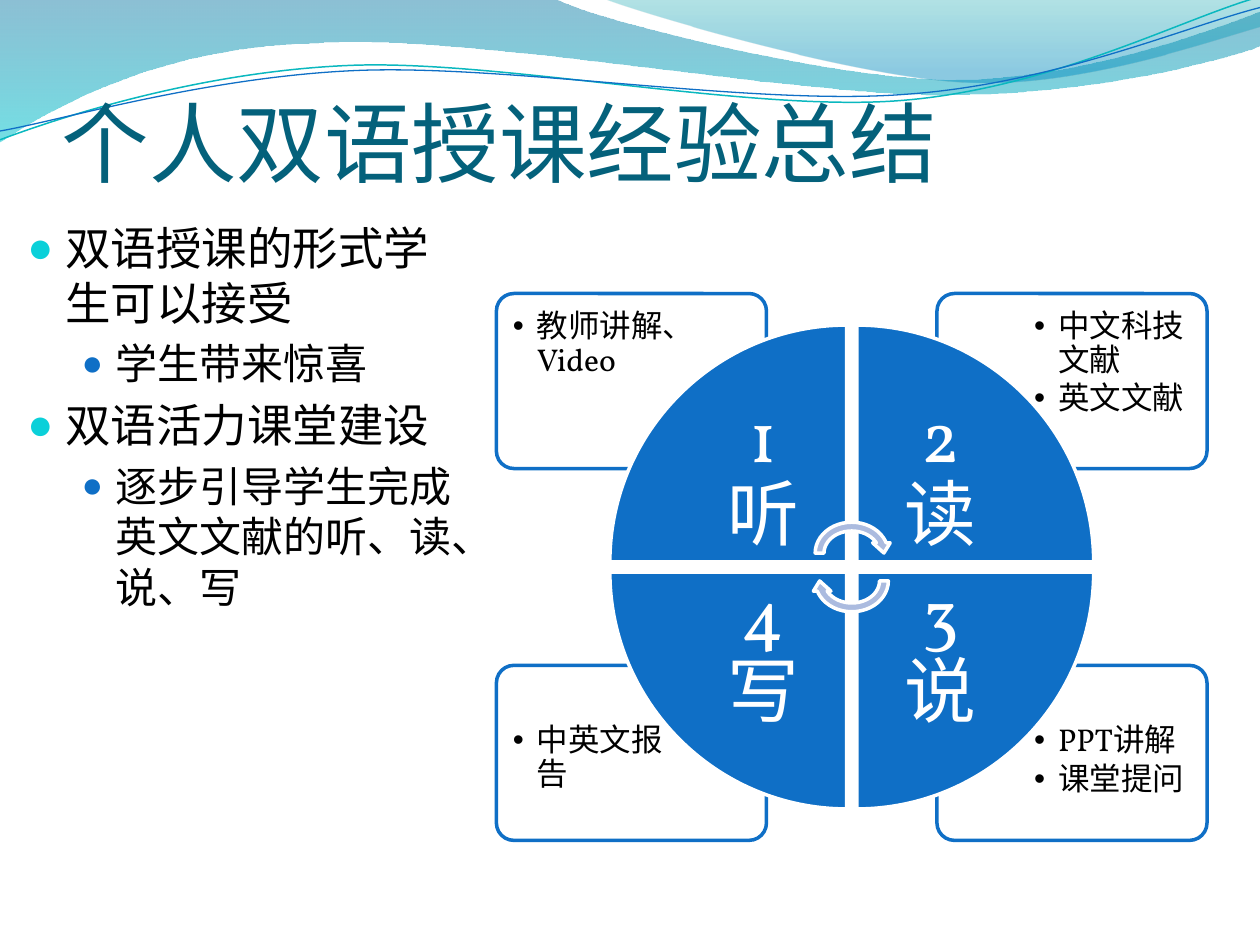
from collections import namedtuple
from itertools import chain, product

from lxml.etree import SubElement
from pptx import Presentation
from pptx.dml.color import RGBColor
from pptx.enum.shapes import MSO_SHAPE
from pptx.enum.text import MSO_ANCHOR, MSO_AUTO_SIZE, PP_ALIGN
from pptx.oxml.ns import qn
from pptx.util import Inches, Pt

Box = namedtuple("Box", "left top width height")
COLORS = {
    "white": "FFFFFF", "black": "000000", "title": "04617B", "blue": "0F6FC6",
    "cyan": "0BD0D9", "teal": "0AB8BF", "arrow": "ABBBDF",
    "wave_top": "0074A1", "wave_low": "00C6CF",
    "crest_top": "00A1A9", "crest_low": "008BBF",
}
TITLE_FONT, TEXT_FONT = "Calibri", "Vollkorn"
PAGE = Box(0, 0, 10, 7.5)
TITLE = Box(0.49, 0.29, 9, 1.25)
OUTLINE = Box(0.12, 1.7, 3.6, 4.8)
CYCLE = Box(3.94, 2.33, 5.64, 4.34)
ARC = 0.55  # handle length of a quarter circle, as a share of its radius

# Start point, then runs of three points (curve) or one point (straight line)
WAVE = [(0, 0), [(4.4, -0.01)], [(4.76, 0.17), (6.64, 0.63), (7.58, 0.63)],
        [(8.53, 0.63), (9.58, 0.26), (10, 0.09)], [(10.01, 0.36)],
        [(9.83, 0.44), (8.7, 0.76), (7.46, 0.75)],
        [(6.22, 0.75), (3.82, 0.28), (2.57, 0.34)],
        [(1.29, 0.36), (0.46, 0.83), (-0.01, 1.13)]]
CREST = [(4.79, -0.01), [(5.09, 0.11), (6.82, 0.62), (7.69, 0.65)],
         [(8.56, 0.69), (9.61, 0.32), (10, 0.21)], [(10, 0)]]
TEAL_LINE = [(0, 1.11), [(0.48, 0.93), (1.58, 0.57), (2.77, 0.52)],
             [(3.95, 0.47), (5.93, 0.89), (7.13, 0.8)],
             [(8.33, 0.71), (9.38, 0.15), (9.98, -0.02)]]
BLUE_LINE = [(0, 1.04), [(0.47, 0.96), (1.64, 0.61), (2.83, 0.56)],
             [(4.03, 0.51), (5.97, 0.84), (7.17, 0.75)],
             [(8.36, 0.67), (9.41, 0.21), (10, 0.06)]]

LEVELS = [dict(size=26, margin=0.3, hang=0.3, bullet="●", bullet_color="cyan", bullet_size=95),
          dict(size=24, margin=0.7, hang=0.27, bullet="●", bullet_color="blue", bullet_size=85)]
POINTS = [(0, "双语授课的形式学生可以接受"), (1, "学生带来惊喜"),
          (0, "双语活力课堂建设"), (1, "逐步引导学生完成英文文献的听、读、说、写")]

# (horizontal side, vertical side): wheel label, card lines
STEPS = {
    (1, 1): ("3说", ["PPT讲解", "课堂提问"]),
    (-1, 1): ("4写", ["中英文报告"]),
    (1, -1): ("2读", ["中文科技文献", "英文文献"]),
    (-1, -1): ("1听", ["教师讲解、Video"]),
}


def rgb(name):
    return RGBColor.from_string(COLORS[name])


def set_opacity(color_element, percent):
    SubElement(color_element, qn("a:alpha"), val=str(percent * 1000))


def paint(shape, fill=None, line=None, width=2):
    shape.shadow.inherit = False
    if fill:
        shape.fill.solid()
        shape.fill.fore_color.rgb = rgb(fill)
    else:
        shape.fill.background()
    if line:
        shape.line.color.rgb = rgb(line)
        shape.line.width = Pt(width)
    else:
        shape.line.fill.background()


def paint_gradient(shape, stops):
    """Fill from top to bottom; each stop is (position, colour, opacity)."""
    paint(shape)
    shape.fill.gradient()
    shape.fill.gradient_angle = 270
    for stop, (position, color, _) in zip(shape.fill.gradient_stops, stops):
        stop.position = position
        stop.color.rgb = rgb(color)
    gradient = shape._element.spPr.find(qn("a:gradFill"))
    for element, stop in zip(gradient.iter(qn("a:srgbClr")), stops):
        set_opacity(element, stop[2])


def set_bullet(para, bullet, margin, hang, color, size):
    properties = para._p.get_or_add_pPr()
    properties.set("marL", str(Inches(margin)))
    properties.set("indent", str(-Inches(hang)))
    holder = SubElement(properties, qn("a:buClr"))
    SubElement(holder, qn("a:srgbClr"), val=COLORS[color])
    SubElement(properties, qn("a:buSzPct"), val=str(size * 1000))
    SubElement(properties, qn("a:buFont"), typeface="Arial")
    SubElement(properties, qn("a:buChar"), char=bullet)


def write(frame, text, size, first=True, font=TEXT_FONT, color="black", align=PP_ALIGN.LEFT,
          before=0, after=0, spacing=1.0, bullet=None, margin=0, hang=0,
          bullet_color="black", bullet_size=100):
    para = frame.paragraphs[0] if first else frame.add_paragraph()
    para.alignment = align
    para.line_spacing = spacing
    para.space_before, para.space_after = Pt(before), Pt(after)
    if bullet:
        set_bullet(para, bullet, margin, hang, bullet_color, bullet_size)
    span = para.add_run()
    span.text = text
    span.font.name, span.font.size = font, Pt(size)
    span.font.color.rgb = rgb(color)


def set_frame(shape, insets, anchor=MSO_ANCHOR.TOP):
    frame = shape.text_frame
    frame.word_wrap = True
    frame.auto_size = MSO_AUTO_SIZE.NONE
    frame.vertical_anchor = anchor
    (frame.margin_left, frame.margin_top,
     frame.margin_right, frame.margin_bottom) = map(Inches, insets)
    return frame


def draw_outline(page, start, *runs, close=True):
    """Draw straight segments through all points, then join runs of three into curves."""
    points = [tuple(map(Inches, point)) for point in chain([start], *runs)]
    builder = page.shapes.build_freeform(*points[0])
    builder.add_line_segments(points[1:], close=close)
    shape = builder.convert_to_shape()
    segments = iter(list(shape._element.iter(qn("a:lnTo"))))
    for run in runs:
        parts = [next(segments) for _ in run]
        if len(run) == 3:
            curve = parts[0].makeelement(qn("a:cubicBezTo"))
            parts[0].addprevious(curve)
            for part in parts:
                curve.append(part[0])
                part.getparent().remove(part)
    return shape


def add_waves(page):
    for outline, stops in (
            (WAVE, [(0, "wave_top", 45), (1, "wave_low", 55)]),
            (CREST, [(0, "crest_top", 30), (0.8, "crest_low", 45)])):
        paint_gradient(draw_outline(page, *outline), stops)
    for outline, color, width in ((TEAL_LINE, "teal", 0.85), (BLUE_LINE, "blue", 0.75)):
        paint(draw_outline(page, *outline, close=False), line=color, width=width)


def add_title(page, box, text):
    title = page.shapes.title
    title.left, title.top, title.width, title.height = map(Inches, box)
    write(set_frame(title, (0, 0.05, 0, 0), MSO_ANCHOR.BOTTOM), text, 50,
          font=TITLE_FONT, color="title")
    page.shapes._spTree.append(title._element)  # in front of the waves


def add_outline_text(page, box):
    frame = set_frame(page.shapes.add_textbox(*map(Inches, box)), (0.1, 0.05, 0.1, 0.05))
    for index, (level, text) in enumerate(POINTS):
        style = LEVELS[level]
        write(frame, text, first=index == 0, before=0.2 * style["size"], **style)


def pads(side_x, side_y, outer, inner_x, inner_y):
    """Insets of a part whose outer edges face away from the wheel's centre."""
    left, right = (outer, inner_x) if side_x < 0 else (inner_x, outer)
    top, bottom = (outer, inner_y) if side_y < 0 else (inner_y, outer)
    return left, top, right, bottom


def add_card(page, box, side_x, side_y, lines):
    width, height = 0.38 * box.width, 0.32 * box.height
    left = box.left + (box.width - width) * (side_x > 0)
    top = box.top + (box.height - height) * (side_y > 0)
    card = page.shapes.add_shape(MSO_SHAPE.ROUNDED_RECTANGLE,
                                 *map(Inches, (left, top, width, height)))
    card.adjustments[0] = 0.1
    paint(card, "white", "blue")
    set_opacity(card._element.spPr.find(qn("a:solidFill"))[0], 90)
    frame = set_frame(card, pads(side_x, side_y, 0.09, 0.73, 0.43))
    for index, line in enumerate(lines):
        write(frame, line, 18, first=index == 0, spacing=0.9, after=2.7,
              bullet="•", margin=0.19, hang=0.19)


def add_quadrant(page, box, side_x, side_y, label):
    gap, radius = 0.04, box.width / 3

    def at(across, down):
        return (box.left + box.width / 2 + side_x * (gap + across * radius),
                box.top + box.height / 2 + side_y * (gap + down * radius))

    quadrant = draw_outline(page, at(0, 0), [at(1, 0)], [at(1, ARC), at(ARC, 1), at(0, 1)])
    paint(quadrant, "blue", "white")
    frame = set_frame(quadrant, pads(side_x, side_y, 0.87, 0.32, 0.32), MSO_ANCHOR.MIDDLE)
    write(frame, label, 41, color="white", align=PP_ALIGN.CENTER, spacing=0.9)


def add_cycle(page, box):
    for sides, (_, lines) in STEPS.items():
        add_card(page, box, *sides, lines)
    for sides in product((-1, 1), repeat=2):
        add_quadrant(page, box, *sides, STEPS[sides][0])
    width, height = 0.65, 0.56
    left = box.left + (box.width - width) / 2
    for side, turn in ((-1, 0), (1, 180)):
        top = box.top + (box.height - height) / 2 + side * 0.11
        arrow = page.shapes.add_shape(MSO_SHAPE.CIRCULAR_ARROW,
                                      *map(Inches, (left, top, width, height)))
        arrow.rotation = turn
        paint(arrow, "arrow", "white")


def main():
    deck = Presentation()
    deck.slide_width, deck.slide_height = Inches(PAGE.width), Inches(PAGE.height)
    page = deck.slides.add_slide(deck.slide_layouts[5])
    add_waves(page)
    add_title(page, TITLE, "个人双语授课经验总结")
    add_outline_text(page, OUTLINE)
    add_cycle(page, CYCLE)
    deck.save("out.pptx")


if __name__ == "__main__":
    main()
